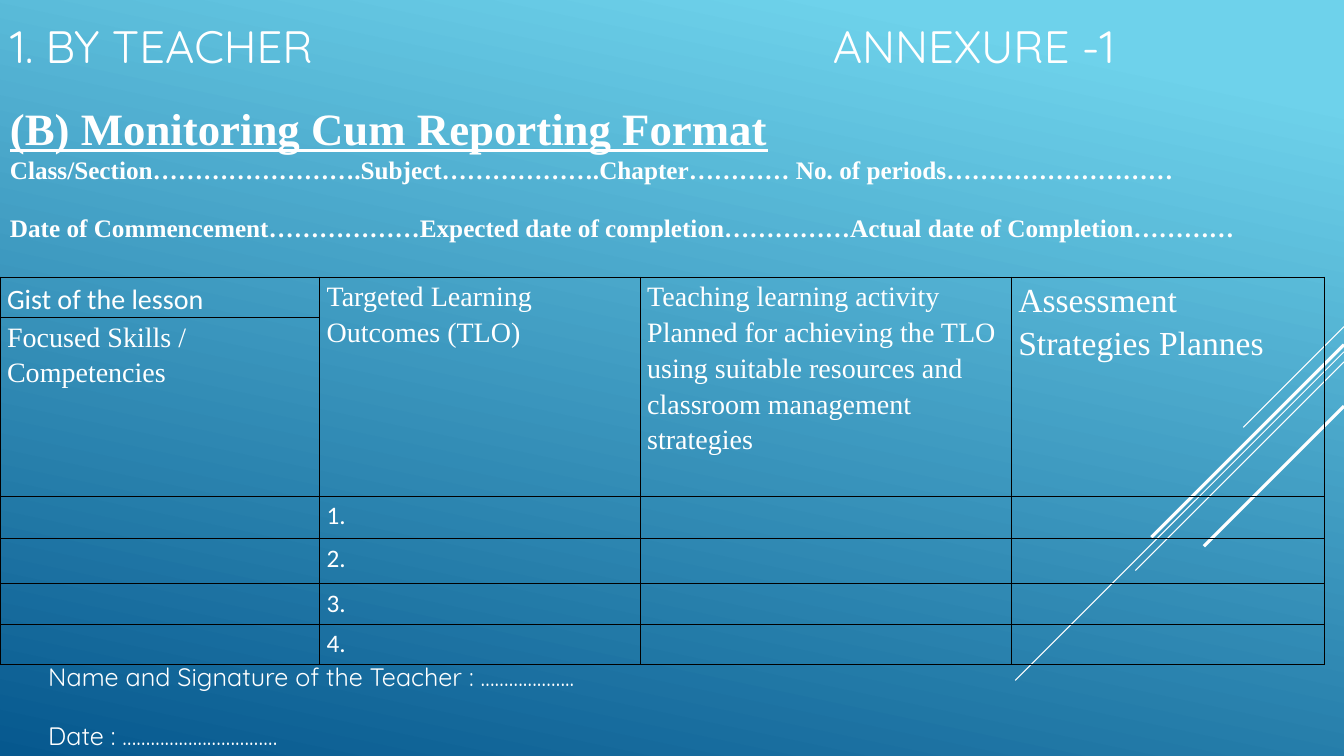
from dataclasses import dataclass

from lxml.etree import SubElement
from pptx import Presentation
from pptx.dml.color import RGBColor as Rgb
from pptx.enum.shapes import MSO_CONNECTOR as Connector
from pptx.enum.text import MSO_ANCHOR as Anchor, PP_ALIGN as Align
from pptx.oxml.ns import qn
from pptx.util import Pt

PX = 9144  # 100 px to the inch


@dataclass(frozen=True)
class Theme:
    sky: Rgb = Rgb.from_string("6ED2EB")
    deep: Rgb = Rgb.from_string("06588E")
    ink: Rgb = Rgb.from_string("FFFFFF")
    border: Rgb = Rgb.from_string("000000")
    display: str = "Quicksand"
    serif: str = "Times New Roman"
    sans: str = "Calibri"
    title: float = 32.4
    heading: int = 32
    large: int = 24
    header: int = 20
    body: int = 18


THEME = Theme()


def px(*lengths):
    return [length * PX for length in lengths]


def write(paragraph, text, font, size, bold=False, underline=False):
    paragraph.text = text
    for run in paragraph.runs:
        run.font.name = font
        run.font.size = Pt(size)
        run.font.bold = bold
        run.font.underline = underline
        run.font.color.rgb = THEME.ink


def paint_background(slide):
    fill = slide.background.fill
    fill.gradient()
    fill.gradient_angle = 360 - 102
    stops = ((0.1, THEME.sky), (1.0, THEME.deep))
    for stop, (position, color) in zip(fill.gradient_stops, stops):
        stop.position = position
        stop.color.rgb = color


def draw_rays(slide, right):
    """Diagonals at 45 degrees that run down and left from the right edge."""
    rays = ((324, 100, 0.75), (349, 326, 0.75), (359, 207, 0.75),
            (342, 191, 2.25), (403, 139, 2.25))
    for top, reach, weight in rays:
        ray = slide.shapes.add_connector(
            Connector.STRAIGHT, *px(right, top, right - reach, top + reach))
        ray.line.color.rgb = THEME.ink
        ray.line.width = Pt(weight)
        SubElement(ray._element.spPr, qn("a:effectLst"))


def place_title(slide, left, top, width, height):
    title = slide.shapes.title
    title.left, title.top, title.width, title.height = px(left, top, width, height)
    frame = title.text_frame
    frame.vertical_anchor = Anchor.MIDDLE
    heading = frame.paragraphs[0]
    write(heading, "1. BY TEACHER\tANNEXURE -1", THEME.display, THEME.title)
    heading.alignment = Align.LEFT
    tabs = SubElement(heading._p.get_or_add_pPr(), qn("a:tabLst"))
    SubElement(tabs, qn("a:tab"), pos=str(816 * PX), algn="l")


def add_text_frame(slide, box):
    frame = slide.shapes.add_textbox(*px(*box)).text_frame
    frame.word_wrap = True
    return frame


def add_format_heading(slide, *box):
    frame = add_text_frame(slide, box)
    frame.vertical_anchor = Anchor.MIDDLE
    heading = frame.paragraphs[0]
    write(heading, "(B) Monitoring Cum Reporting Format",
          THEME.serif, THEME.heading, bold=True, underline=True)
    class_details = frame.add_paragraph()
    write(class_details, "Class/Section…………………….Subject……………….Chapter………… "
          "No. of periods………………………", THEME.serif, THEME.body, bold=True)
    dates = frame.add_paragraph()
    write(dates, "Date of Commencement………………Expected date of completion……………"
          "Actual date of Completion…………", THEME.serif, THEME.body, bold=True)
    dates.space_before = Pt(20)
    for paragraph in frame.paragraphs:
        paragraph.alignment = Align.JUSTIFY


def format_cell(cell):
    cell.fill.background()
    cell.margin_left = cell.margin_right = 7 * PX
    cell.margin_top = cell.margin_bottom = 0
    properties = cell._tc.get_or_add_tcPr()
    for index, side in enumerate(("a:lnL", "a:lnR", "a:lnT", "a:lnB")):
        edge = SubElement(properties, qn(side), w=str(Pt(1)))
        properties.insert(index, edge)
        fill = SubElement(edge, qn("a:solidFill"))
        SubElement(fill, qn("a:srgbClr"), val=str(THEME.border))


def add_plan_table(slide, left, top):
    columns = (317, 318, 368, 311)
    rows = (40, 177, 42, 45, 40, 40)
    plan = slide.shapes.add_table(
        len(rows), len(columns), *px(left, top, sum(columns), sum(rows))).table
    plan.first_row = plan.horz_banding = False
    for column, width in zip(plan.columns, columns):
        column.width = width * PX
    for row, height in zip(plan.rows, rows):
        row.height = height * PX
    for cell in plan.iter_cells():
        format_cell(cell)
    for column in range(1, len(columns)):
        plan.cell(0, column).merge(plan.cell(1, column))

    entries = [
        (0, 0, "Gist of the lesson", THEME.sans, THEME.header),
        (1, 0, "Focused Skills / Competencies", THEME.serif, THEME.header),
        (0, 1, "Targeted Learning Outcomes (TLO)", THEME.serif, THEME.header),
        (0, 2, "Teaching learning activity Planned for achieving the TLO using "
         "suitable resources and classroom management strategies",
         THEME.serif, THEME.header),
        (0, 3, "Assessment Strategies Plannes", THEME.serif, THEME.large),
    ]
    entries += [(number + 1, 1, f"{number}.", THEME.sans, THEME.body)
                for number in range(1, 5)]
    for row, column, text, font, size in entries:
        paragraph = plan.cell(row, column).text_frame.paragraphs[0]
        write(paragraph, text, font, size)
        paragraph.line_spacing = 1.15


def add_signature(slide, *box):
    frame = add_text_frame(slide, box)
    write(frame.paragraphs[0], "Name and Signature of the Teacher : ………………..",
          THEME.display, THEME.body)
    date = frame.add_paragraph()
    write(date, "Date : ……………………………", THEME.display, THEME.body)
    date.space_before = Pt(21)


def build_annexure(deck):
    slide = deck.slides.add_slide(deck.slide_layouts[5])
    paint_background(slide)
    draw_rays(slide, 1333)
    place_title(slide, 0, 0, 1258, 91)
    add_plan_table(slide, 0, 275)
    add_format_heading(slide, 0, 95, 1359, 151)
    add_signature(slide, 38, 651, 648, 101)


def main():
    deck = Presentation()
    deck.slide_width, deck.slide_height = px(1333, 750)
    build_annexure(deck)
    deck.save("out.pptx")


if __name__ == "__main__":
    main()
